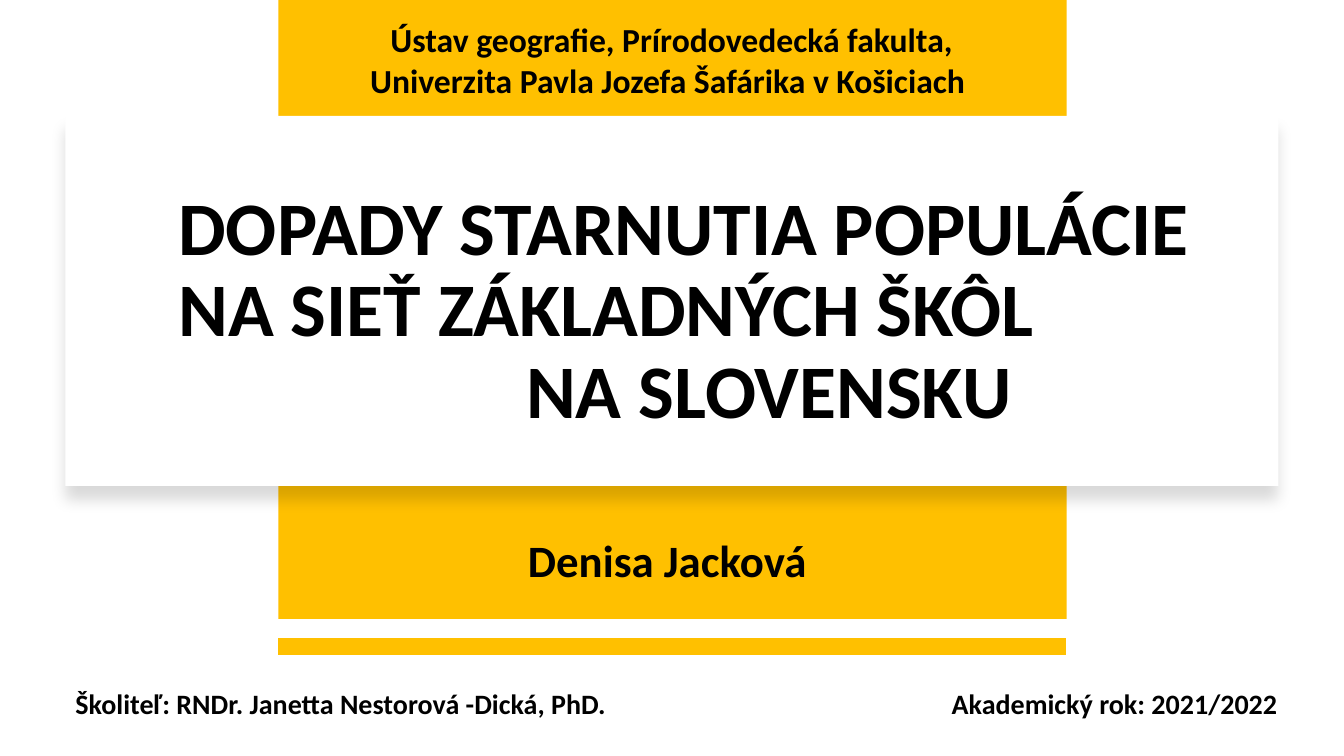
from lxml import etree
from pptx import Presentation
from pptx.dml.color import RGBColor
from pptx.enum import shapes, text
from pptx.oxml.ns import qn
from pptx.util import Inches, Pt

YELLOW, WHITE, BLACK = "FFC000", "FFFFFF", "000000"
LEFT, CENTER = text.PP_ALIGN.LEFT, text.PP_ALIGN.CENTER


def color(value):
    return RGBColor.from_string(value)


def add_panel(page, left, top, width, height, fill):
    panel = page.shapes.add_shape(
        shapes.MSO_SHAPE.RECTANGLE,
        Inches(left), Inches(top), Inches(width), Inches(height))
    panel.shadow.inherit = False
    panel.fill.solid()
    panel.fill.fore_color.rgb = color(fill)
    panel.line.fill.background()
    return panel


def add_soft_shadow(panel):
    """Cast a faint black shadow straight down."""
    effects = panel._element.spPr.find(qn("a:effectLst"))
    shadow = etree.SubElement(
        effects, qn("a:outerShdw"), blurRad=str(Pt(11)), dist=str(Pt(10)),
        dir="5400000", algn="t", rotWithShape="0")
    tint = etree.SubElement(shadow, qn("a:srgbClr"), val=BLACK)
    etree.SubElement(tint, qn("a:alpha"), val="15000")


def add_rule(page, left, right, y):
    rule = page.shapes.add_connector(
        shapes.MSO_CONNECTOR.STRAIGHT,
        Inches(right), Inches(y), Inches(left), Inches(y))
    rule.line.color.rgb = color(YELLOW)
    rule.line.width = Pt(12)
    etree.SubElement(rule._element.spPr, qn("a:effectLst"))


def add_text(page, left, top, width, height, lines, size, align=LEFT,
             anchor=text.MSO_ANCHOR.TOP, spacing=1.0):
    box = page.shapes.add_textbox(
        Inches(left), Inches(top), Inches(width), Inches(height))
    frame = box.text_frame
    frame.word_wrap = True
    frame.vertical_anchor = anchor
    frame.text = "\n".join(lines)
    for para in frame.paragraphs:
        para.alignment = align
        para.line_spacing = spacing
        para.font.name = "Calibri"
        para.font.size = Pt(size)
        para.font.bold = True
        para.font.color.rgb = color(BLACK)
    return frame


def indent(para, distance):
    properties = para._p.get_or_add_pPr()
    properties.set("marL", str(Inches(distance)))
    properties.set("indent", "0")


def main():
    deck = Presentation()
    deck.slide_width, deck.slide_height = Inches(13.33), Inches(7.5)
    page = deck.slides.add_slide(deck.slide_layouts[6])

    add_rule(page, 2.76, 10.57, 6.41)
    add_panel(page, 2.76, -0.02, 7.82, 6.16, YELLOW)
    add_soft_shadow(add_panel(page, 0.65, 1.15, 12.03, 3.67, WHITE))

    middle = text.MSO_ANCHOR.MIDDLE
    title = add_text(
        page, 1.67, 1.36, 10.26, 3.48,
        ["DOPADY STARNUTIA POPULÁCIE", "NA SIEŤ ZÁKLADNÝCH ŠKÔL",
         "NA SLOVENSKU"], 54, anchor=middle, spacing=0.9)
    indent(title.paragraphs[-1], 3.45)

    author = add_text(page, 1.67, 5.16, 10, 1.29, ["Denisa Jacková "], 32,
                      CENTER, middle, 0.9)
    author.margin_bottom = Inches(0.48)

    add_text(page, 2.97, 0.14, 7.38, 0.91,
             ["Ústav geografie, Prírodovedecká fakulta,",
              "Univerzita Pavla Jozefa Šafárika v Košiciach "], 24, CENTER)
    add_text(page, 0.65, 6.76, 7.81, 0.44,
             ["Školiteľ: RNDr. Janetta Nestorová -Dická, PhD."], 20)
    add_text(page, 9.34, 6.76, 3.48, 0.44,
             ["Akademický rok: 2021/2022"], 20)

    deck.save("out.pptx")


if __name__ == "__main__":
    main()
